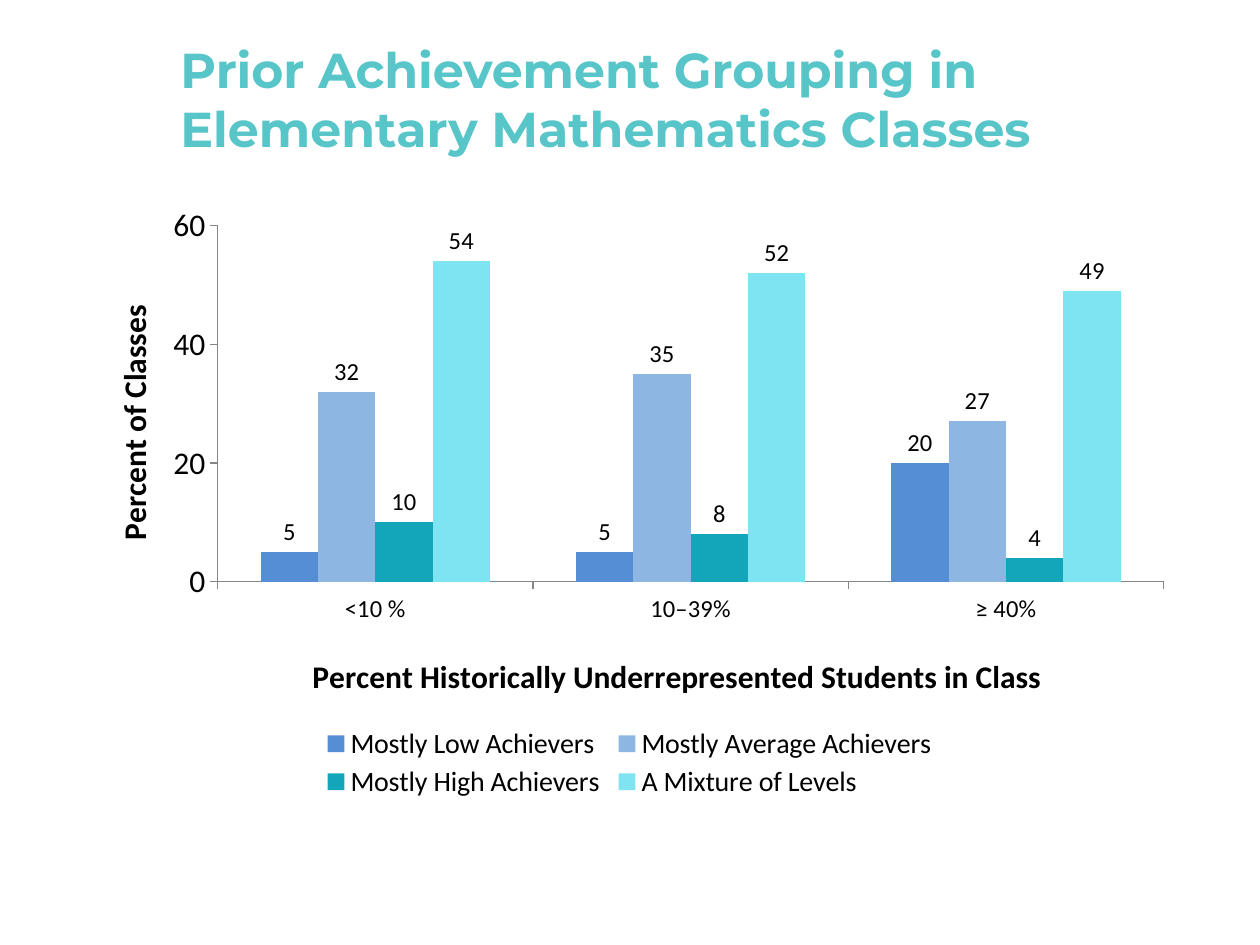
"""Build the slide on achievement grouping in elementary mathematics classes."""
from typing import NamedTuple

from lxml.etree import SubElement
from pptx import Presentation
from pptx.chart.data import CategoryChartData as Data
from pptx.dml.color import RGBColor as RGB
from pptx.enum.chart import XL_CHART_TYPE as Kind
from pptx.enum.chart import XL_LABEL_POSITION as Spot
from pptx.enum.chart import XL_LEGEND_POSITION as Side
from pptx.enum.chart import XL_TICK_MARK as Tick
from pptx.enum.text import MSO_ANCHOR as Anchor
from pptx.oxml.ns import qn
from pptx.util import Emu, Pt

BLACK = RGB(0x00, 0x00, 0x00)
GREY = RGB(0x86, 0x86, 0x86)
TEAL = RGB(0x58, 0xC5, 0xC9)
BLUE = RGB(0x55, 0x8E, 0xD5)
PALE = RGB(0x8E, 0xB6, 0xE3)
DEEP = RGB(0x13, 0xA6, 0xBA)
AQUA = RGB(0x7F, 0xE4, 0xF2)


class Box(NamedTuple):
    left: int
    top: int
    width: int
    height: int


class Group(NamedTuple):
    name: str
    color: RGB
    shares: tuple[int, ...]


class Axis(NamedTuple):
    title: str
    size: int
    left: float
    top: float


PAGE = Box(0, 0, 1260, 945)
HEAD = Box(168, 38, 1029, 120)
CHART = Box(73, 195, 1113, 614)
CLASSES = ("<10 %", "10–39%", "≥ 40%")
GROUPS = (
    Group("Mostly Low Achievers", BLUE, (5, 5, 20)),
    Group("Mostly Average Achievers", PALE, (32, 35, 27)),
    Group("Mostly High Achievers", DEEP, (10, 8, 4)),
    Group("A Mixture of Levels", AQUA, (54, 52, 49)),
)
ACROSS = Axis("Percent Historically Underrepresented Students in Class", 14, 0.21, 0.74)
UPWARD = Axis("Percent of Classes", 18, 0.03, 0.17)


def px(count: int) -> Emu:
    """Turn pixels into EMU."""
    return Emu(round(count * 914400 / 126))


def style(font, size: int, color: RGB = BLACK, name: str = "Calibri", bold: bool = False) -> None:
    """Set the look of a font."""
    font.size, font.name, font.bold = Pt(size), name, bold
    font.color.rgb = color


def place(part, **shares: float) -> None:
    """Give a chart part a manual layout in shares of the chart."""
    for old in part.findall(qn("c:layout")):
        part.remove(old)
    layout = SubElement(part, qn("c:layout"))
    manual = SubElement(layout, qn("c:manualLayout"))
    if part.tag == qn("c:plotArea"):
        SubElement(manual, qn("c:layoutTarget")).set("val", "inner")
        part.insert(0, layout)
    else:
        part.find(qn("c:overlay")).addprevious(layout)
    for key in ("x", "y"):
        SubElement(manual, qn(f"c:{key}Mode")).set("val", "edge")
    for key, share in shares.items():
        SubElement(manual, qn(f"c:{key}")).set("val", str(share))


def draw_head(slide) -> None:
    """Draw the slide title."""
    frame = slide.shapes.add_textbox(*map(px, HEAD)).text_frame
    frame.word_wrap = True
    frame.vertical_anchor = Anchor.MIDDLE
    frame.text = "Prior Achievement Grouping in Elementary Mathematics Classes"
    style(frame.paragraphs[0].runs[0].font, 28, TEAL, "Montserrat", True)


def set_axis(axis, look: Axis) -> None:
    """Style an axis and its title."""
    axis.has_major_gridlines = False
    axis.major_tick_mark, axis.minor_tick_mark = Tick.OUTSIDE, Tick.NONE
    axis.format.line.color.rgb = GREY
    axis.format.line.width = Pt(0.75)
    style(axis.tick_labels.font, look.size)
    frame = axis.axis_title.text_frame
    frame.text = look.title
    style(frame.paragraphs[0].runs[0].font, 18, bold=True)
    place(axis.axis_title._element, x=look.left, y=look.top)


def set_bars(bars, group: Group) -> None:
    """Colour one series and label its bars."""
    bars.format.fill.solid()
    bars.format.fill.fore_color.rgb = group.color
    bars.invert_if_negative = False
    labels = bars.data_labels
    labels.show_value = True
    labels.position = Spot.OUTSIDE_END
    style(labels.font, 14)


def draw_chart(slide) -> None:
    """Draw the clustered columns."""
    data = Data()
    data.categories = CLASSES
    for group in GROUPS:
        data.add_series(group.name, group.shares)
    chart = slide.shapes.add_chart(Kind.COLUMN_CLUSTERED, *map(px, CHART), data).chart
    style(chart.font, 18)
    chart.has_title = False
    plot = chart.plots[0]
    plot.gap_width, plot.overlap = 150, 0
    plot.vary_by_categories = False
    for bars, group in zip(plot.series, GROUPS):
        set_bars(bars, group)
    set_axis(chart.category_axis, ACROSS)
    set_axis(chart.value_axis, UPWARD)
    scale = chart.value_axis
    scale.minimum_scale, scale.maximum_scale, scale.major_unit = 0, 60, 20
    chart.has_legend = True
    legend = chart.legend
    legend.position = Side.BOTTOM
    legend.include_in_layout = False
    style(legend.font, 16)
    place(legend._element, x=0.22, y=0.86, w=0.56, h=0.13)
    area = chart._chartSpace.find(".//" + qn("c:plotArea"))
    place(area, x=0.13, y=0.05, w=0.85, h=0.58)


def main() -> None:
    """Build and save the slide."""
    deck = Presentation()
    deck.slide_width, deck.slide_height = px(PAGE.width), px(PAGE.height)
    slide = deck.slides.add_slide(deck.slide_layouts[6])
    draw_chart(slide)
    draw_head(slide)
    deck.save("out.pptx")


if __name__ == "__main__":
    main()
